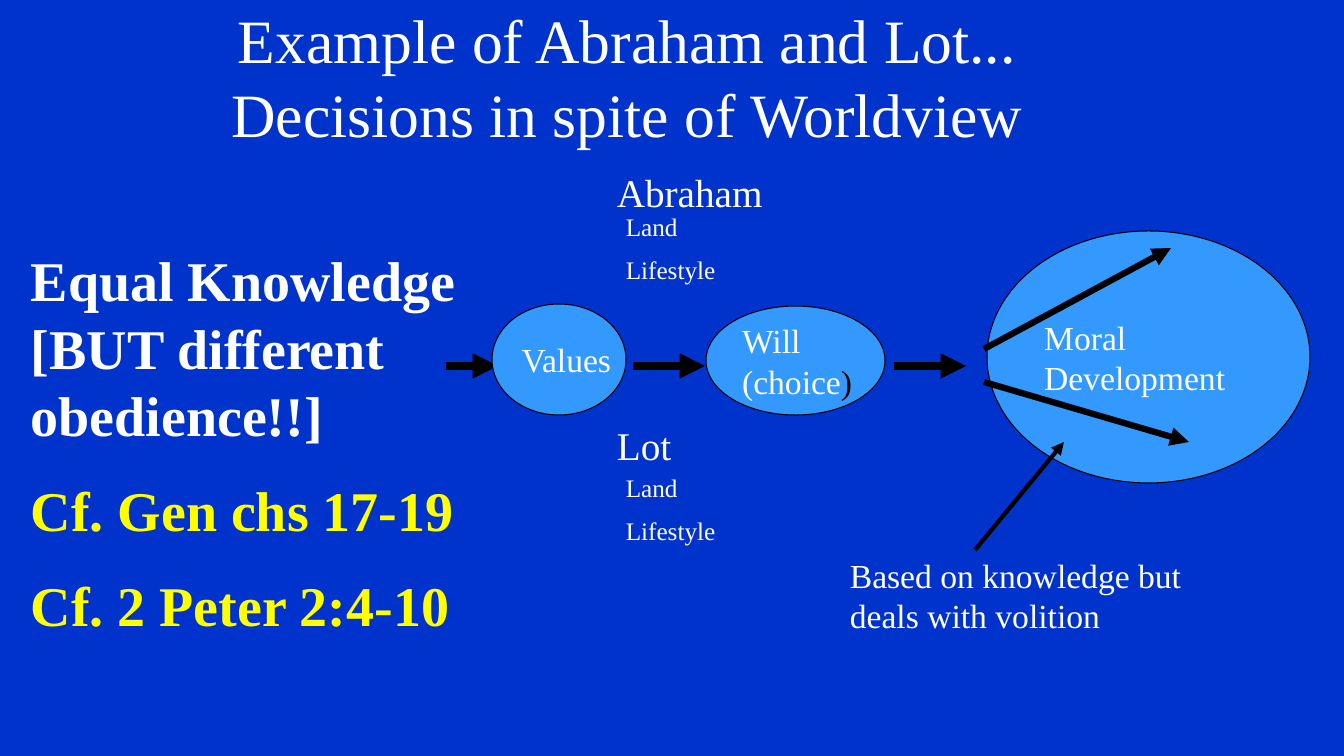
"""Build a slide on decisions made in spite of worldview."""
import dataclasses

import lxml.etree
import pptx
import pptx.dml.color
import pptx.enum.shapes
import pptx.enum.text
import pptx.oxml
import pptx.oxml.ns
import pptx.util

EMU_PER_PX = 914400 / 100.8
FONT = "Times New Roman"
WHITE, YELLOW, BLACK = "FFFFFF", "FFFF00", "000000"
DEEP_BLUE, SKY_BLUE = "0033CC", "3399FF"


@dataclasses.dataclass(frozen=True)
class Line:
    text: str
    color: str = WHITE
    tail: str = ""


@dataclasses.dataclass(frozen=True)
class Label:
    left: int
    top: int
    width: int
    height: int
    size: int
    lines: tuple[Line, ...]
    bold: bool = False


@dataclasses.dataclass(frozen=True)
class Arrow:
    start: tuple[int, int]
    end: tuple[int, int]
    weight: float


FLOW_Y = 366
FLOW_ARROWS = [
    Arrow((left, FLOW_Y), (right, FLOW_Y), 6)
    for left, right in ((446, 498), (633, 705), (894, 966))
]
OUTCOME_ARROWS = [
    Arrow((984, 349), (1171, 248), 4.5),
    Arrow((984, 382), (1189, 442), 4.5),
    Arrow((975, 550), (1064, 442), 3),
]
ELLIPSES = [
    Label(492, 304, 134, 111, 24, (Line("Values"),)),
    Label(706, 306, 179, 109, 24, (Line("Will"), Line("(choice", tail=")"))),
    Label(987, 231, 323, 252, 24, (Line("Moral"), Line("Development"))),
]
DESIRES = (Line("Land"), Line("Lifestyle"))
LABELS = [
    Label(21, 241, 459, 417, 40, (
        Line("Equal Knowledge [BUT different obedience!!]"),
        Line("Cf. Gen chs 17-19", YELLOW),
        Line("Cf. 2 Peter 2:4-10", YELLOW),
    ), bold=True),
    Label(607, 163, 188, 57, 28, (Line("Abraham"),)),
    Label(607, 416, 161, 57, 28, (Line("Lot"),)),
    Label(616, 206, 170, 86, 18, DESIRES),
    Label(616, 467, 170, 86, 18, DESIRES),
    Label(840, 550, 359, 92, 24, (Line("Based on knowledge but deals with volition"),)),
]
TITLE = Label(65, -12, 1125, 175, 44, (
    Line("Example of Abraham and Lot...\vDecisions in spite of Worldview"),
))


def px(value: int) -> pptx.util.Emu:
    """Turn pixels into EMU."""
    return pptx.util.Emu(round(value * EMU_PER_PX))


def rgb(color: str) -> pptx.dml.color.RGBColor:
    """Turn a hex string into a colour."""
    return pptx.dml.color.RGBColor.from_string(color)


def bounds(label: Label) -> tuple[pptx.util.Emu, ...]:
    """Give left, top, width and height in EMU."""
    return tuple(px(side) for side in (label.left, label.top, label.width, label.height))


def write_lines(frame, label: Label, align, space_before: float = 0) -> None:
    """Write each line of a label as a paragraph."""
    for index, line in enumerate(label.lines):
        para = frame.add_paragraph() if index else frame.paragraphs[0]
        para.text = line.text
        para.alignment = align
        para.space_before = pptx.util.Pt(space_before)
        para.font.name = FONT
        para.font.size = pptx.util.Pt(label.size)
        para.font.bold = label.bold
        para.font.color.rgb = rgb(line.color)
        if line.tail:
            span = para.add_run()
            span.text = line.tail
            span.font.color.rgb = rgb(BLACK)


def draw_label(page, label: Label) -> None:
    """Draw a wrapped text box with half a line between paragraphs."""
    frame = page.shapes.add_textbox(*bounds(label)).text_frame
    frame.word_wrap = True
    frame.auto_size = pptx.enum.text.MSO_AUTO_SIZE.SHAPE_TO_FIT_TEXT
    write_lines(frame, label, pptx.enum.text.PP_ALIGN.LEFT, label.size / 2)


def draw_title(page, label: Label) -> None:
    """Draw the centred title."""
    frame = page.shapes.add_textbox(*bounds(label)).text_frame
    frame.word_wrap = True
    frame.vertical_anchor = pptx.enum.text.MSO_ANCHOR.MIDDLE
    write_lines(frame, label, pptx.enum.text.PP_ALIGN.CENTER)


def draw_ellipse(page, label: Label) -> None:
    """Draw a labelled stage of the process."""
    ellipse = page.shapes.add_shape(pptx.enum.shapes.MSO_SHAPE.OVAL, *bounds(label))
    ellipse.shadow.inherit = False
    ellipse.fill.solid()
    ellipse.fill.fore_color.rgb = rgb(SKY_BLUE)
    ellipse.line.color.rgb = rgb(BLACK)
    ellipse.line.width = pptx.util.Pt(0.75)
    frame = ellipse.text_frame
    frame.word_wrap = False
    frame.vertical_anchor = pptx.enum.text.MSO_ANCHOR.MIDDLE
    write_lines(frame, label, pptx.enum.text.PP_ALIGN.LEFT)


def draw_arrow(page, arrow: Arrow) -> None:
    """Draw a straight line with a triangular head."""
    connector = page.shapes.add_connector(
        pptx.enum.shapes.MSO_CONNECTOR.STRAIGHT,
        *(px(value) for value in arrow.start + arrow.end),
    )
    connector.line.color.rgb = rgb(BLACK)
    connector.line.width = pptx.util.Pt(arrow.weight)
    outline = connector.line._get_or_add_ln()
    lxml.etree.SubElement(outline, pptx.oxml.ns.qn("a:tailEnd"), type="triangle")
    lxml.etree.SubElement(connector._element.spPr, pptx.oxml.ns.qn("a:effectLst"))


def main() -> None:
    """Build and save the deck."""
    deck = pptx.Presentation()
    deck.slide_width, deck.slide_height = px(1344), px(756)
    page = deck.slides.add_slide(deck.slide_layouts[6])
    page.background.fill.solid()
    page.background.fill.fore_color.rgb = rgb(DEEP_BLUE)
    for label in LABELS:
        draw_label(page, label)
    for arrow in FLOW_ARROWS:
        draw_arrow(page, arrow)
    for ellipse in ELLIPSES:
        draw_ellipse(page, ellipse)
    for arrow in OUTCOME_ARROWS:
        draw_arrow(page, arrow)
    draw_title(page, TITLE)
    deck.save("out.pptx")


if __name__ == "__main__":
    main()
